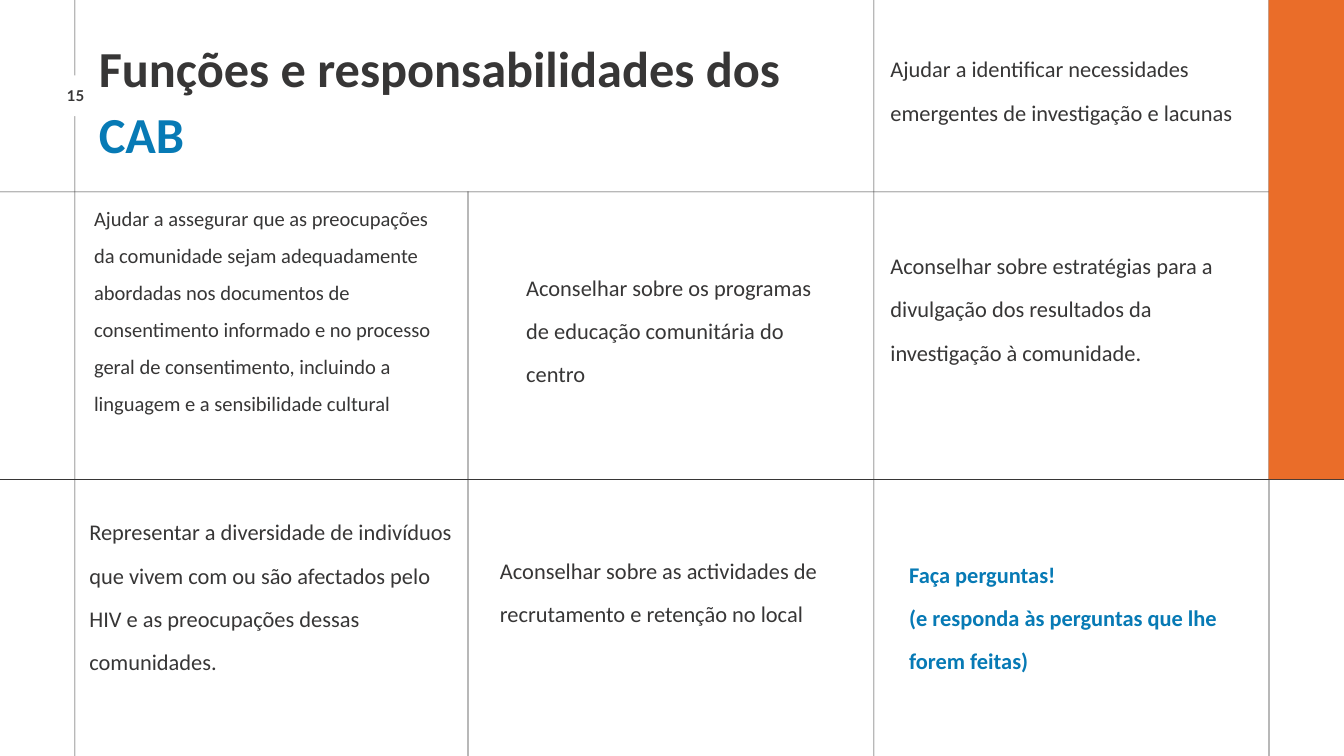
from pptx import Presentation
from pptx.dml.color import RGBColor
from pptx.enum.shapes import MSO_SHAPE
from pptx.enum.text import MSO_ANCHOR, MSO_AUTO_SIZE, PP_ALIGN
from pptx.util import Inches, Pt

# Content
TITLE = [("Funções e responsabilidades dos ", "ink"), ("CAB", "accent")]
PAGE_NUMBER = "15"
ROLES = [  # left, top, width, height, text
    (13.25, 0.58, 5.3, 1.88,
     "Ajudar a identificar necessidades emergentes de investigação e lacunas"),
    (1.33, 7.47, 5.45, 3.15,
     "Representar a diversidade de indivíduos que vivem com ou são afectados "
     "pelo HIV e as preocupações dessas comunidades."),
    (7.44, 8.04, 5.12, 1.85,
     "Aconselhar sobre as actividades de recrutamento e retenção no local"),
    (7.83, 3.83, 4.32, 1.85,
     "Aconselhar sobre os programas de educação comunitária do centro"),
    (13.25, 3.51, 5.39, 2.5,
     "Aconselhar sobre estratégias para a divulgação dos resultados da "
     "investigação à comunidade."),
]
CONSENT = ("Ajudar a assegurar que as preocupações da comunidade sejam "
           "adequadamente abordadas nos documentos de consentimento informado "
           "e no processo geral de consentimento, incluindo a linguagem e a "
           "sensibilidade cultural")
QUESTIONS = ["Faça perguntas!", "(e responda às perguntas que lhe forem feitas)"]

# Theme and grid
THEME = {
    "ink": "373636", "accent": "077AB5", "band": "EA6D29", "paper": "FFFFFF",
    "font": "Calibri", "number_font": "Lato",
    "title": 54, "body": 24, "dense": 22, "number": 16,
    "title_spacing": Pt(70.4), "body_spacing": Pt(46.4), "number_spacing": Pt(17.6),
}
WIDTH, HEIGHT, HAIRLINE = 20, 11.25, 0.01
LEFT, MIDDLE, RIGHT, EDGE = 1.11, 6.96, 13, 18.88
UPPER, LOWER = 2.85, 7.13


def add_block(slide, left, top, width, height, color):
    block = slide.shapes.add_shape(
        MSO_SHAPE.RECTANGLE, Inches(left), Inches(top), Inches(width), Inches(height))
    block.shadow.inherit = False
    block.fill.solid()
    block.fill.fore_color.rgb = RGBColor.from_string(THEME[color])
    block.line.fill.background()


def write(box, paragraphs, size="body", font="font", bold=False,
          spacing=THEME["body_spacing"], align=PP_ALIGN.LEFT):
    """Fill a box with paragraphs, each a list of (text, color) spans."""
    frame = box.text_frame
    frame.word_wrap = True
    frame.auto_size = MSO_AUTO_SIZE.NONE
    frame.vertical_anchor = MSO_ANCHOR.TOP
    frame.margin_left = frame.margin_right = frame.margin_top = frame.margin_bottom = 0
    for index, spans in enumerate(paragraphs):
        para = frame.paragraphs[0] if index == 0 else frame.add_paragraph()
        para.alignment = align
        para.line_spacing = spacing
        para.space_before = Pt(0)
        for text, color in spans:
            span = para.add_run()
            span.text = text
            span.font.name = THEME[font]
            span.font.size = Pt(THEME[size])
            span.font.bold = bold
            span.font.color.rgb = RGBColor.from_string(THEME[color])


def add_text(slide, left, top, width, height, paragraphs, **style):
    box = slide.shapes.add_textbox(
        Inches(left), Inches(top), Inches(width), Inches(height))
    write(box, paragraphs, **style)


def main():
    deck = Presentation()
    deck.slide_width, deck.slide_height = Inches(WIDTH), Inches(HEIGHT)
    page = deck.slides.add_slide(deck.slide_layouts[5])

    # Page number on the left rule
    add_block(page, LEFT, 0, HAIRLINE, HEIGHT, "ink")
    add_block(page, 0.69, 1.12, 0.86, 0.61, "paper")
    add_text(page, 0.76, 1.31, 0.73, 0.25, [[(PAGE_NUMBER, "ink")]],
             size="number", font="number_font", bold=True,
             spacing=THEME["number_spacing"], align=PP_ALIGN.CENTER)

    # Grid rules and side band
    for top in (UPPER, LOWER):
        add_block(page, 0, top, WIDTH, HAIRLINE, "ink")
    for left, top in ((EDGE, 0), (MIDDLE, UPPER), (RIGHT, 0)):
        add_block(page, left, top, HAIRLINE, HEIGHT - top, "ink")
    add_block(page, EDGE, 0, WIDTH - EDGE, LOWER, "band")

    # Title, raised above the page number's white patch
    title = page.shapes.title
    title.left, title.top = Inches(1.47), Inches(0.48)
    title.width, title.height = Inches(11.41), Inches(1.89)
    write(title, [TITLE], size="title", bold=True, spacing=THEME["title_spacing"])
    page.shapes.element.append(title.element)

    # Roles in the grid cells
    add_text(page, 1.4, 2.88, 5.33, 3.82, [[(CONSENT, "ink")]], size="dense", spacing=1.5)
    for left, top, width, height, text in ROLES:
        add_text(page, left, top, width, height, [[(text, "ink")]])
    add_text(page, 13.53, 8.1, 4.83, 1.85,
             [[(text, "accent")] for text in QUESTIONS], bold=True)

    deck.save("out.pptx")


if __name__ == "__main__":
    main()
